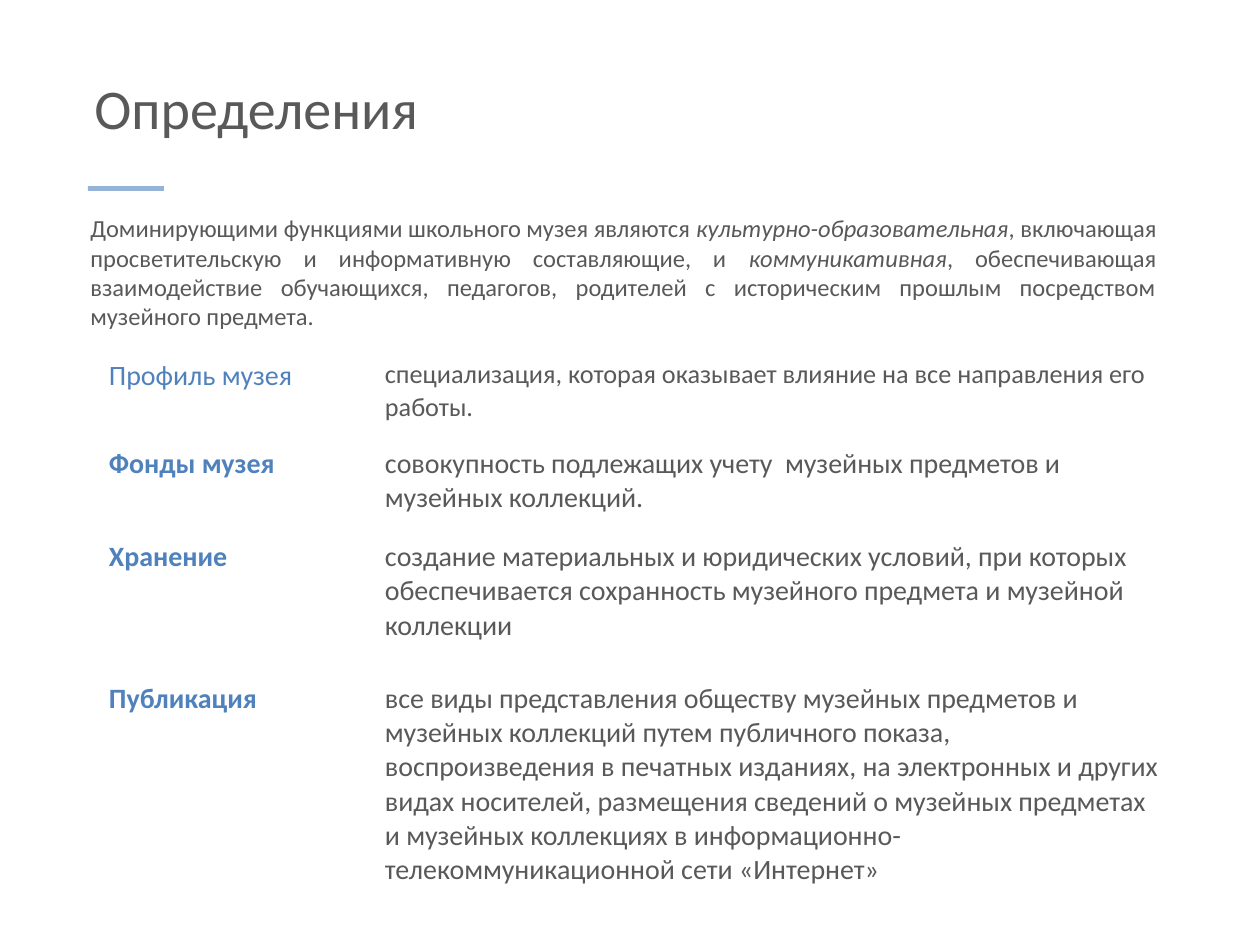
from pptx import Presentation
from pptx.dml.color import RGBColor
from pptx.enum.shapes import MSO_SHAPE as Shape
from pptx.enum.text import MSO_ANCHOR as Anchor, PP_ALIGN as Align
from pptx.util import Pt

PX = 914400 / 126
GREY = RGBColor(0x59, 0x59, 0x59)
BLUE = RGBColor(0x4F, 0x81, 0xBD)
PALE_BLUE = RGBColor(0x95, 0xB3, 0xD7)
WHITE = RGBColor(0xFF, 0xFF, 0xFF)


def px(*lengths):
    """Turn px lengths into EMU."""
    return [round(length * PX) for length in lengths]


def add_span(para, text, size, color, **formats):
    span = para.add_run()
    span.text = text
    span.font.color.rgb = color
    for name, value in {"name": "Calibri", "size": Pt(size), **formats}.items():
        setattr(span.font, name, value)


deck = Presentation()
deck.slide_width, deck.slide_height = px(1260, 945)
page = deck.slides.add_slide(deck.slide_layouts[6])

# Title and the short rule below it
title = page.shapes.add_textbox(*px(82, 16, 1091, 131)).text_frame
title.word_wrap = True
title.vertical_anchor = Anchor.BOTTOM
add_span(title.paragraphs[0], "Определения", 32, GREY)

rule = page.shapes.add_shape(Shape.RECTANGLE, *px(88, 186, 76, 5))
rule.shadow.inherit = False
rule.fill.solid()
rule.fill.fore_color.rgb = PALE_BLUE
rule.line.fill.background()

# Introduction
intro = page.shapes.add_textbox(*px(78, 207, 1091, 137)).text_frame
intro.word_wrap = True
intro_para = intro.paragraphs[0]
intro_para.alignment = Align.JUSTIFY
for text, italic in [
    ("Доминирующими функциями школьного музея являются ", False),
    ("культурно-образовательная", True),
    (", включающая просветительскую и информативную составляющие, и ", False),
    ("коммуникативная", True),
    (", обеспечивающая взаимодействие обучающихся, педагогов, родителей "
     "с историческим прошлым посредством музейного предмета.", False),
]:
    add_span(intro_para, text, 14, GREY, italic=italic)

# Terms: row height, term, bold term, definition, definition size
terms = [
    (88, "Профиль музея", False,
     "специализация, которая оказывает влияние на все направления его работы.", 15),
    (93, "Фонды музея", True,
     "совокупность подлежащих учету  музейных предметов и музейных коллекций.", 16),
    (142, "Хранение", True,
     "создание материальных и юридических условий, при которых обеспечивается "
     "сохранность музейного предмета и музейной коллекции", 16),
    (212, "Публикация", True,
     "все виды представления обществу музейных предметов и музейных коллекций "
     "путем публичного показа, воспроизведения в печатных изданиях, на электронных "
     "и других видах носителей, размещения сведений о музейных предметах и музейных "
     "коллекциях в информационно-телекоммуникационной сети «Интернет»", 16),
]
table = page.shapes.add_table(len(terms), 2, *px(98, 354, 1072, 535)).table
table.first_row = table.horz_banding = False
for column, width in zip(table.columns, px(276, 796)):
    column.width = width

side, edge = px(11, 5)
margins = {"margin_left": side, "margin_right": side,
           "margin_top": edge, "margin_bottom": edge}
for row, (height, term, bold, definition, size) in zip(table.rows, terms):
    row.height = px(height)[0]
    for cell in row.cells:
        cell.fill.solid()
        cell.fill.fore_color.rgb = WHITE
        for name, value in margins.items():
            setattr(cell, name, value)
    term_cell, definition_cell = row.cells
    add_span(term_cell.text_frame.paragraphs[0], term, 16, BLUE, bold=bold)
    add_span(definition_cell.text_frame.paragraphs[0], definition, size, GREY, bold=False)

deck.save("out.pptx")
